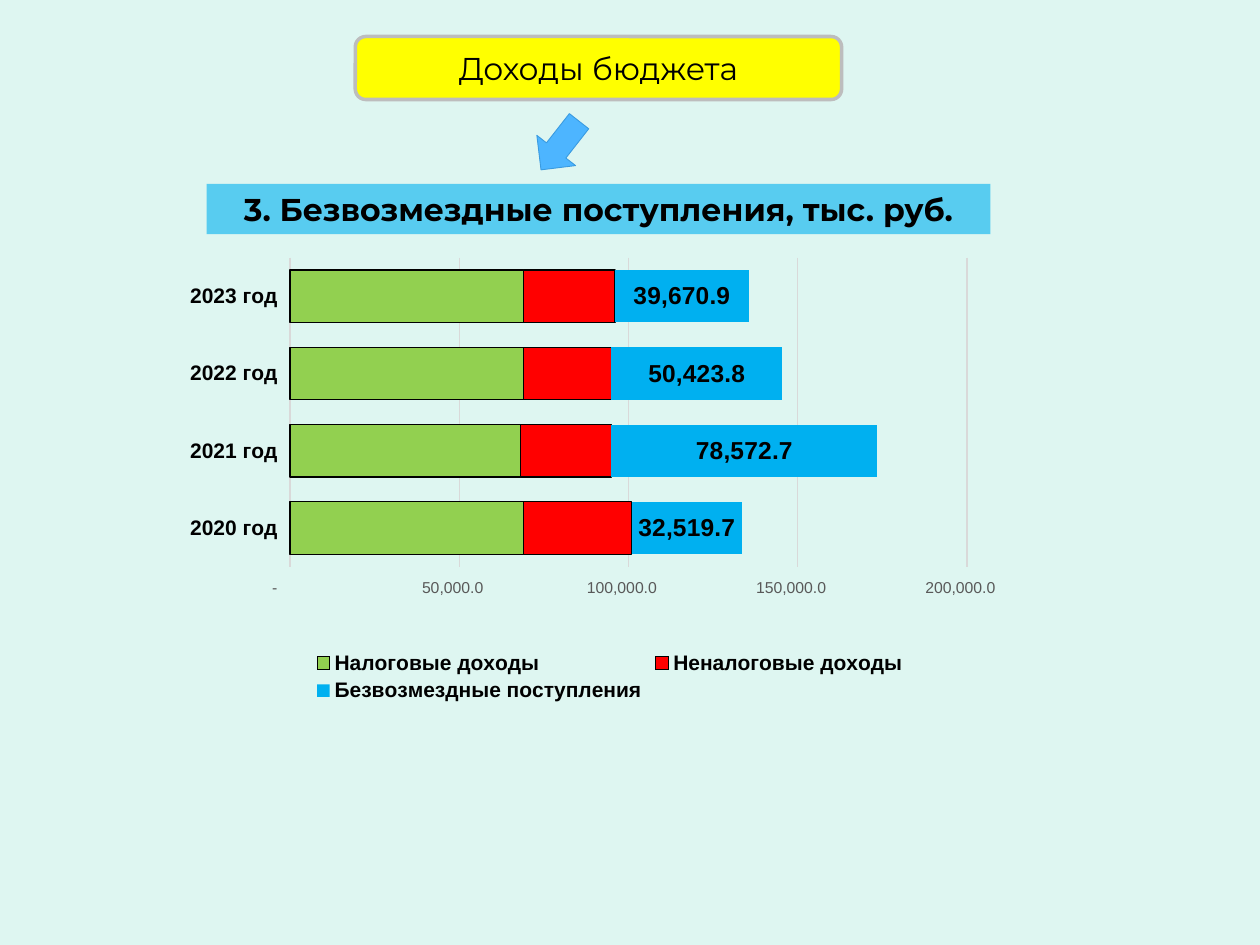
import dataclasses

import pptx
import pptx.chart.data
import pptx.dml.color
import pptx.enum.chart
import pptx.enum.shapes
import pptx.enum.text
import pptx.oxml
import pptx.oxml.ns
import pptx.util
from pptx.util import Inches


@dataclasses.dataclass(frozen=True)
class Theme:
    background: str = "DEF6F1"
    text: str = "000000"
    muted: str = "595959"
    grid: str = "D9D9D9"
    title_fill: str = "FFFF00"
    title_line: str = "BDBDBD"
    arrow_fill: str = "4DB5FF"
    arrow_line: str = "3A9BE0"
    tax: str = "92D050"
    non_tax: str = "FF0000"
    grants: str = "00B0F0"
    heading_font: str = "Montserrat"
    chart_font: str = "Arial"
    heading_size: int = 18
    value_size: int = 14
    label_size: int = 12
    base_size: int = 10
    axis_size: int = 9


theme = Theme()


def rgb(value):
    return pptx.dml.color.RGBColor.from_string(value)


def style_font(font, name, size, color=theme.text, bold=False):
    font.name = name
    font.size = pptx.util.Pt(size)
    font.color.rgb = rgb(color)
    font.bold = bold


deck = pptx.Presentation()
deck.slide_width = Inches(10)
deck.slide_height = Inches(7.5)
page = deck.slides.add_slide(deck.slide_layouts[6])
page.background.fill.solid()
page.background.fill.fore_color.rgb = rgb(theme.background)

# Title, arrow and subtitle: preset, position, fill, line, line width, text, bold
preset = pptx.enum.shapes.MSO_SHAPE
headings = [
    (preset.ROUNDED_RECTANGLE, (2.82, 0.29, 3.86, 0.5), theme.title_fill,
     theme.title_line, 2, "Доходы бюджета", False),
    (preset.DOWN_ARROW, (4.25, 0.91, 0.39, 0.49), theme.arrow_fill,
     theme.arrow_line, 0.5, "", False),
    (preset.RECTANGLE, (1.64, 1.46, 6.22, 0.4), theme.grants,
     None, 0, "3. Безвозмездные поступления, тыс. руб.", True),
]
boxes = []
for kind, place, fill, line, width, text, bold in headings:
    box = page.shapes.add_shape(kind, *map(Inches, place))
    box.shadow.inherit = False
    box.fill.solid()
    box.fill.fore_color.rgb = rgb(fill)
    if line:
        box.line.color.rgb = rgb(line)
        box.line.width = pptx.util.Pt(width)
    else:
        box.line.fill.background()
    if text:
        box.text_frame.word_wrap = True
        box.text_frame.vertical_anchor = pptx.enum.text.MSO_ANCHOR.MIDDLE
        para = box.text_frame.paragraphs[0]
        para.text = text
        para.alignment = pptx.enum.text.PP_ALIGN.CENTER
        style_font(para.font, theme.heading_font, theme.heading_size, bold=bold)
    boxes.append(box)

title, arrow, subtitle = boxes
arrow.rotation = 38

# Subtitle fill is 60% opaque
color_xml = subtitle.fill._xPr.find(".//" + pptx.oxml.ns.qn("a:srgbClr"))
color_xml.append(pptx.oxml.parse_xml(
    f'<a:alpha {pptx.oxml.ns.nsdecls("a")} val="60000"/>'))

# Stacked bar chart of revenue
data = pptx.chart.data.CategoryChartData()
data.categories = [f"{year} год" for year in range(2020, 2024)]
revenue = [
    ("Налоговые доходы", (69000, 68000, 69000, 69000), theme.tax),
    ("Неналоговые доходы", (32000, 27000, 26000, 27000), theme.non_tax),
    ("Безвозмездные поступления", (32519.7, 78572.7, 50423.8, 39670.9), theme.grants),
]
for name, values, color in revenue:
    data.add_series(name, values)
chart = page.shapes.add_chart(
    pptx.enum.chart.XL_CHART_TYPE.BAR_STACKED,
    Inches(1.14), Inches(1.67), Inches(7.4), Inches(3.94), data).chart
style_font(chart.font, theme.chart_font, theme.base_size)
chart.has_title = False

plot = chart.plots[0]
plot.gap_width = 47
plot.overlap = 100
plot.vary_by_categories = False
for series, (name, values, color) in zip(plot.series, revenue):
    series.format.fill.solid()
    series.format.fill.fore_color.rgb = rgb(color)
    if color == theme.grants:
        series.format.line.fill.background()
        labels = series.data_labels
        labels.show_value = True
        labels.number_format = "#,##0.0"
        labels.number_format_is_linked = False
        style_font(labels.font, theme.chart_font, theme.value_size, bold=True)
    else:
        series.format.line.color.rgb = rgb(theme.text)
        series.format.line.width = pptx.util.Pt(0.75)

# Axes
for axis in (chart.category_axis, chart.value_axis):
    axis.format.line.fill.background()
    axis.major_tick_mark = pptx.enum.chart.XL_TICK_MARK.OUTSIDE
style_font(chart.category_axis.tick_labels.font, theme.chart_font,
           theme.label_size, bold=True)
amounts = chart.value_axis
amounts.minimum_scale = 0
amounts.maximum_scale = 200000
amounts.major_unit = 50000
amounts.has_major_gridlines = True
amounts.major_gridlines.format.line.color.rgb = rgb(theme.grid)
amounts.major_gridlines.format.line.width = pptx.util.Pt(0.75)
amounts.tick_labels.number_format = (
    '_-* #,##0.0_р_._-;\\-* #,##0.0_р_._-;_-* "-"??_р_._-;_-@_-')
amounts.tick_labels.number_format_is_linked = False
style_font(amounts.tick_labels.font, theme.chart_font, theme.axis_size, theme.muted)

# Legend
chart.has_legend = True
chart.legend.position = pptx.enum.chart.XL_LEGEND_POSITION.BOTTOM
chart.legend.include_in_layout = False
style_font(chart.legend.font, theme.chart_font, theme.label_size, bold=True)

# Fixed inner plot area, as fractions of the chart
plot_area = chart._chartSpace.chart.plotArea
for layout in plot_area.findall(pptx.oxml.ns.qn("c:layout")):
    plot_area.remove(layout)
modes = '<c:xMode val="edge"/><c:yMode val="edge"/>'
sizes = "".join(f'<c:{key} val="{value}"/>' for key, value in
                (("x", 0.157), ("y", 0.095), ("w", 0.726), ("h", 0.623)))
plot_area.insert(0, pptx.oxml.parse_xml(
    f'<c:layout {pptx.oxml.ns.nsdecls("c")}><c:manualLayout>'
    f'<c:layoutTarget val="inner"/>{modes}{sizes}'
    '</c:manualLayout></c:layout>'))

deck.save("out.pptx")
